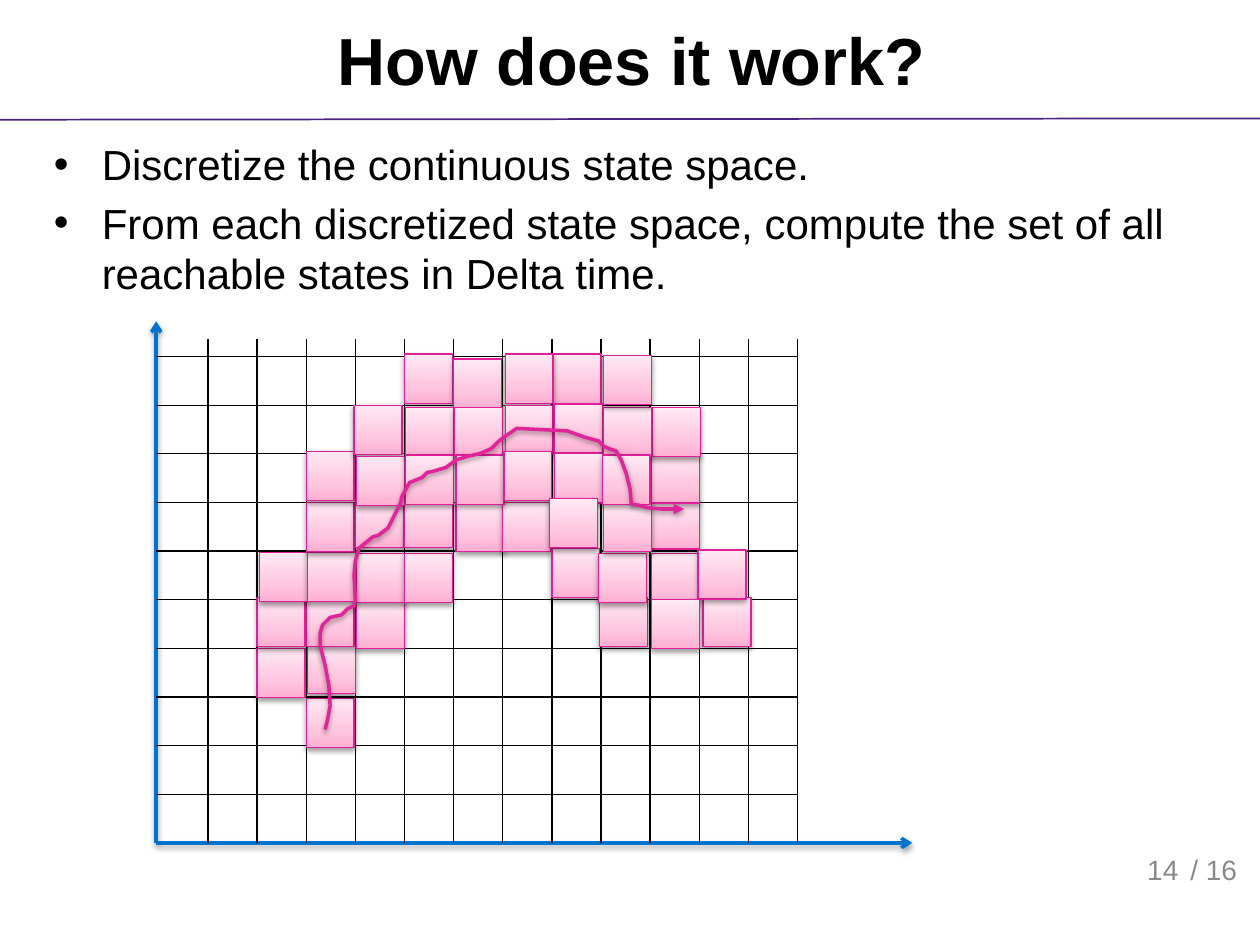
from dataclasses import dataclass

from lxml.etree import SubElement
from pptx import Presentation
from pptx.dml.color import RGBColor
from pptx.enum.shapes import MSO_CONNECTOR, MSO_SHAPE
from pptx.enum.text import MSO_ANCHOR, PP_ALIGN
from pptx.oxml.ns import qn
from pptx.util import Inches, Pt


@dataclass(frozen=True)
class Theme:
    font: str = "Arial"
    text: str = "000000"
    muted: str = "898989"
    rule: str = "4A2384"
    axis: str = "0073CF"
    cell_line: str = "E01F98"
    path_line: str = "E0249A"
    cell_stops: tuple = ((0, "FFAFD3"), (35, "FFC6DF"), (100, "FFE9F3"))
    title_size: int = 38
    body_size: int = 24
    footer_size: int = 16
    thin: float = 0.75
    thick: float = 2


THEME = Theme()
WIDTH, HEIGHT = 10, 7.5

# Grid of the state space: pitch, and the first inner lines from the box corner
COLS, ROWS = 13, 10
COL, ROW = 0.39, 0.386
FIRST_COL, FIRST_ROW = 0.41, 0.14
CELL_W, CELL_H = 0.38, 0.39

# Reached cells: column, row, then nudge right and down in hundredths of an inch
CELLS = [
    (2, 7, 0, 1), (2, 6, 1, -3), (1, 6, 0, 0), (2, 5, 0, -2), (3, 5, 1, 0),
    (1, 5, 0, -2), (1, 4, 2, 1), (3, 4, 1, 2), (2, 4, 1, 1), (4, 4, 0, 2),
    (2, 3, 0, 0), (3, 3, 0, -3), (5, 3, 2, 0), (6, 3, 0, 0), (7, 4, 0, -2),
    (8, 5, -1, -2), (9, 4, 1, 2), (9, 3, 1, -2), (9, 2, 1, 0), (9, 1, 2, 2),
    (7, 0, 1, -2), (2, 2, 0, -2), (3, 1, -1, 0), (4, 0, 0, -2), (5, 0, 0, 2),
    (6, 0, 2, -2), (4, 3, 0, -3), (3, 2, 1, 2), (4, 1, 1, 2), (4, 2, 1, 1),
    (5, 1, 1, 2), (5, 2, 2, 1), (6, 1, 2, 0), (6, 2, 1, -2), (7, 1, 2, -1),
    (8, 1, 2, 2), (7, 2, 2, 0), (10, 5, 3, -2), (10, 4, -1, -1), (9, 5, 1, 0),
    (8, 4, -2, 2), (8, 3, 2, 0), (8, 2, 1, 1), (7, 3, -2, -3), (8, 0, 2, -1),
]

# Trajectory, in inches from the corner of the grid box
TRAJECTORY = [
    (1.34, 3.1), (1.36, 3.02), (1.38, 2.91), (1.37, 2.75), (1.34, 2.59),
    (1.33, 2.55), (1.3, 2.43), (1.3, 2.34), (1.32, 2.27), (1.38, 2.21),
    (1.47, 2.19), (1.52, 2.14), (1.57, 2.12), (1.58, 2.07), (1.57, 1.87),
    (1.58, 1.76), (1.61, 1.66), (1.72, 1.57), (1.76, 1.56), (1.84, 1.5),
    (1.88, 1.42), (1.94, 1.3), (1.95, 1.25), (2.01, 1.14), (2.11, 1.1),
    (2.15, 1.06), (2.2, 1.05), (2.3, 1.02), (2.38, 0.96), (2.48, 0.93),
    (2.57, 0.91), (2.66, 0.87), (2.72, 0.81), (2.76, 0.78), (2.86, 0.71),
    (3.26, 0.73), (3.4, 0.78), (3.51, 0.81), (3.55, 0.85), (3.59, 0.87),
    (3.65, 0.89), (3.69, 0.96), (3.73, 1.07), (3.76, 1.19), (3.77, 1.31),
    (3.83, 1.32), (3.9, 1.34), (4.01, 1.35), (4.19, 1.35),
]


def set_line(sp, color, width, arrow=None):
    sp.line.color.rgb = RGBColor.from_string(color)
    sp.line.width = Pt(width)
    if arrow:
        SubElement(sp.line._get_or_add_ln(), qn("a:tailEnd"), type=arrow)


def add_effects(sp, shadow):
    """Replace the theme's shadow by none, or by a soft one below the shape."""
    effects = SubElement(sp._element.spPr, qn("a:effectLst"))
    if shadow:
        outer = SubElement(effects, qn("a:outerShdw"), blurRad=str(Pt(3.1)),
                           dist=str(Pt(1.6)), dir="5400000", rotWithShape="0")
        color = SubElement(outer, qn("a:srgbClr"), val="000000")
        SubElement(color, qn("a:alpha"), val="38000")


def add_line(s, x1, y1, x2, y2, color, width, arrow=None, shadow=False):
    sp = s.shapes.add_connector(MSO_CONNECTOR.STRAIGHT, *map(Inches, (x1, y1, x2, y2)))
    set_line(sp, color, width, arrow)
    add_effects(sp, shadow)


def add_text(s, box, lines, size, color=THEME.text, bold=False,
             align=PP_ALIGN.LEFT, anchor=MSO_ANCHOR.TOP, bullet=False):
    tf = s.shapes.add_textbox(*map(Inches, box)).text_frame
    tf.word_wrap = True
    tf.vertical_anchor = anchor
    for i, line in enumerate(lines):
        p = tf.add_paragraph() if i else tf.paragraphs[0]
        p.text = line
        p.alignment = align
        if bullet:
            pPr = p._p.get_or_add_pPr()
            pPr.set("marL", str(Inches(0.38)))
            pPr.set("indent", str(-Inches(0.38)))
            SubElement(pPr, qn("a:buFont"), typeface=THEME.font)
            SubElement(pPr, qn("a:buChar"), char="•")
            if i:
                p.space_before = Pt(size * 0.2)
        font = p.runs[0].font
        font.name, font.size, font.bold = THEME.font, Pt(size), bold
        font.color.rgb = RGBColor.from_string(color)


def add_header(s, box):
    left, top, width, height = box
    add_line(s, 0, top + height + 0.01, WIDTH, top + height, THEME.rule, 1)
    add_text(s, box, ["How does it work?"], THEME.title_size, bold=True,
             align=PP_ALIGN.CENTER, anchor=MSO_ANCHOR.MIDDLE)


def add_footer(s, box):
    left, top, width, height = box
    for x, text, align in ((left, "14", PP_ALIGN.RIGHT),
                           (left + 0.96, "/ 16", PP_ALIGN.LEFT)):
        add_text(s, (x, top, width, height), [text], THEME.footer_size,
                 THEME.muted, align=align, anchor=MSO_ANCHOR.BOTTOM)


def add_grid(s, box):
    left, top, width, height = box
    right, bottom = left + width, top + height
    # Axes
    for x, y in ((left, top - 0.14), (right + 0.91, bottom)):
        add_line(s, left, bottom, x, y, THEME.axis, THEME.thick, "arrow", True)
    # Inner lines
    for c in range(COLS):
        x = left + FIRST_COL + c * COL
        add_line(s, x, top, x, bottom, THEME.text, THEME.thin)
    for r in range(ROWS):
        y = top + FIRST_ROW + r * ROW
        add_line(s, left, y, right, y, THEME.text, THEME.thin)


def add_cell(s, left, top):
    sp = s.shapes.add_shape(MSO_SHAPE.RECTANGLE, *map(Inches, (left, top, CELL_W, CELL_H)))
    sp.fill.gradient()
    sp.fill.gradient_angle = 90
    stops = sp._element.spPr.find(qn("a:gradFill")).find(qn("a:gsLst"))
    stops.clear()
    for share, color in THEME.cell_stops:
        stop = SubElement(stops, qn("a:gs"), pos=str(share * 1000))
        SubElement(stop, qn("a:srgbClr"), val=color)
    set_line(sp, THEME.cell_line, THEME.thin)
    add_effects(sp, True)


def add_reached_cells(s, box):
    left, top = box[:2]
    for c, r, dx, dy in CELLS:
        add_cell(s, left + FIRST_COL + c * COL + dx / 100,
                 top + FIRST_ROW + r * ROW + dy / 100)


def add_trajectory(s, box):
    left, top = box[:2]
    points = [(Inches(left + x), Inches(top + y)) for x, y in TRAJECTORY]
    builder = s.shapes.build_freeform(*points[0])
    builder.add_line_segments(points[1:], close=False)
    sp = builder.convert_to_shape()
    sp.fill.background()
    set_line(sp, THEME.path_line, THEME.thick, "triangle")
    add_effects(sp, True)


def main():
    prs = Presentation()
    prs.slide_width, prs.slide_height = Inches(WIDTH), Inches(HEIGHT)
    s = prs.slides.add_slide(prs.slide_layouts[6])
    add_header(s, (0.33, 0, 9.37, 0.94))
    add_text(s, (0.33, 1.05, 9.37, 1.65), [
        "Discretize the continuous state space.",
        "From each discretized state space, compute the set of all "
        "reachable states in Delta time.",
    ], THEME.body_size, bullet=True)
    add_footer(s, (8.39, 6.68, 1.06, 0.4))
    plot = (1.24, 2.69, 5.09, 4)
    add_grid(s, plot)
    add_reached_cells(s, plot)
    add_trajectory(s, plot)
    prs.save("out.pptx")


if __name__ == "__main__":
    main()
